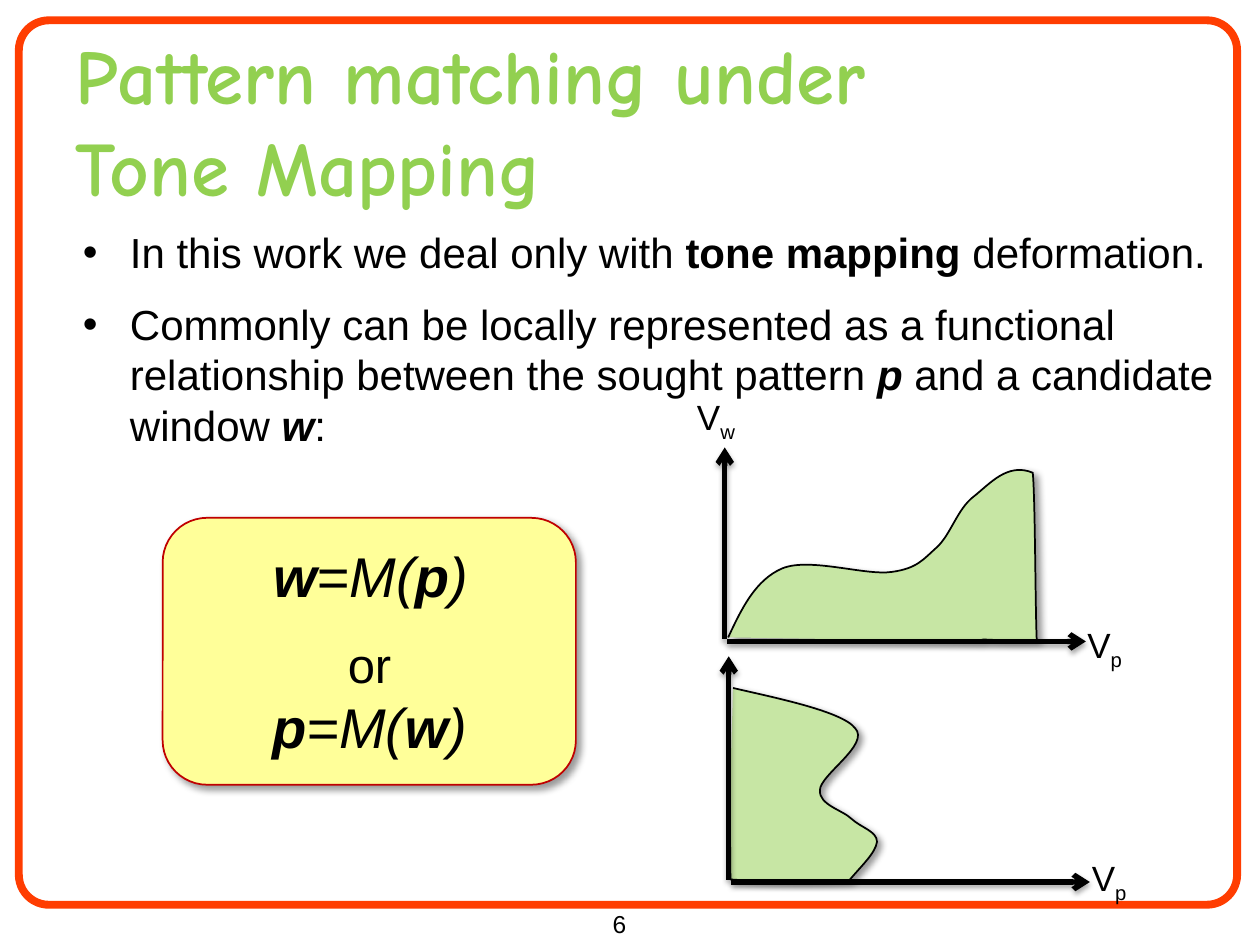
import dataclasses

import lxml.etree
import pptx
import pptx.dml.color
import pptx.enum.shapes
import pptx.enum.text
import pptx.oxml
import pptx.oxml.ns
import pptx.util

Cm, Pt = pptx.util.Cm, pptx.util.Pt
RGB = pptx.dml.color.RGBColor.from_string
SHAPE = pptx.enum.shapes.MSO_SHAPE
ALIGN = pptx.enum.text.PP_ALIGN
ANCHOR = pptx.enum.text.MSO_ANCHOR
qn = pptx.oxml.ns.qn


@dataclasses.dataclass(frozen=True)
class Theme:
    """Colours, fonts and type sizes of the slide."""
    ink: str = "000000"
    title: str = "92D050"
    frame: str = "FF3D01"
    area: str = "C7E6A4"
    panel: str = "FFFF99"
    panel_line: str = "C00000"
    font: str = "Arial"
    title_font: str = "Comic Neue"
    title_size: int = 44
    formula_size: int = 32
    or_size: int = 28
    body_size: int = 24
    label_size: int = 20
    number_size: int = 14


THEME = Theme()
TONE_CURVE = [
    (0.03, 0.08), (0.3, 0.66), (0.58, 1.24), (1.12, 1.47),
    (1.68, 1.7), (2.79, 1.32), (3.33, 1.4),
    (3.84, 1.47), (3.96, 1.65), (4.24, 1.9),
    (4.52, 2.16), (4.65, 2.67), (4.98, 2.92),
    (5.31, 3.18), (5.66, 3.61), (6.17, 3.4),
    (6.22, 2.87), (6.22, 0.71), (6.25, 0.03),
    (5.13, 0), (5.13, 0.08), (5.13, 0),
]
INVERSE_CURVE = [
    (0.05, 3.91), (0.81, 3.73), (2.24, 3.45), (2.51, 3.1),
    (2.82, 2.77), (1.8, 2.16), (1.8, 1.85),
    (1.78, 1.55), (2.26, 1.45), (2.44, 1.27),
    (2.64, 1.09), (2.95, 1.02), (2.95, 0.81),
    (2.92, 0.58), (2.64, 0.33), (2.39, 0.03),
    (1.68, 0), (0.76, 0), (0, 0.05),
    (-0.03, 0.76), (0.03, 0.71), (-0.05, 0.71),
]


def add_text(s, box, paragraphs, size, color=THEME.ink, font=THEME.font, align=ALIGN.LEFT,
             anchor=ANCHOR.TOP, wrap=True, bullet=False, space=0):
    """Add a text box; each paragraph is a list of (text, run format) pairs."""
    sp = s.shapes.add_textbox(*map(Cm, box))
    tf = sp.text_frame
    tf.word_wrap, tf.vertical_anchor = wrap, anchor
    for i, runs in enumerate(paragraphs):
        p = tf.add_paragraph() if i else tf.paragraphs[0]
        p.alignment = align
        p.space_before = p.space_after = Pt(space)
        if bullet:
            pPr = p._p.get_or_add_pPr()
            pPr.set("marL", str(Cm(0.95)))
            pPr.set("indent", str(-Cm(0.95)))
            lxml.etree.SubElement(pPr, qn("a:buFont"), typeface=font)
            lxml.etree.SubElement(pPr, qn("a:buChar"), char="•")
        for text, style in runs:
            for j, line in enumerate(text.split("\n")):
                if j:
                    p.add_line_break()
                r = p.add_run()
                r.text = line
                r.font.name, r.font.color.rgb = font, RGB(color)
                r.font.size = Pt(style.get("size", size))
                r.font.bold, r.font.italic = style.get("bold", False), style.get("italic", False)
                if "baseline" in style:
                    r.font._element.set("baseline", str(style["baseline"] * 1000))
    return sp


def add_shadow(sp, alpha=40, blur=4, dist=3, angle=45):
    """Give a shape or connector an outer shadow."""
    effects = lxml.etree.SubElement(sp._element.spPr, qn("a:effectLst"))
    shadow = lxml.etree.SubElement(
        effects, qn("a:outerShdw"), blurRad=str(Pt(blur)), dist=str(Pt(dist)),
        dir=str(angle * 60000), rotWithShape="0")
    color = lxml.etree.SubElement(shadow, qn("a:srgbClr"), val=THEME.ink)
    lxml.etree.SubElement(color, qn("a:alpha"), val=str(alpha * 1000))


def style_shape(sp, fill, line, width, shadow=True):
    """Set the fill, outline and shadow of a shape."""
    if fill:
        sp.fill.solid()
        sp.fill.fore_color.rgb = RGB(fill)
    else:
        sp.fill.background()
    sp.line.color.rgb, sp.line.width = RGB(line), Pt(width)
    if shadow:
        add_shadow(sp)
    else:
        sp.shadow.inherit = False


def add_arrow(s, x1, y1, x2, y2):
    """Draw an axis arrow between two points."""
    c = s.shapes.add_connector(pptx.enum.shapes.MSO_CONNECTOR.STRAIGHT,
                               Cm(x1), Cm(y1), Cm(x2), Cm(y2))
    c.line.color.rgb, c.line.width = RGB(THEME.ink), Pt(3)
    lxml.etree.SubElement(c.line._get_or_add_ln(), qn("a:tailEnd"), type="arrow")
    add_shadow(c, alpha=35, blur=3.1, dist=1.8, angle=90)


def add_curve(s, points):
    """Add an open freeform of cubic Bezier segments."""
    start, *rest = [(Cm(x), Cm(y)) for x, y in points]
    builder = s.shapes.build_freeform(*start)
    builder.add_line_segments(rest, close=False)
    sp = builder.convert_to_shape()
    lines = list(sp._element.iter(qn("a:lnTo")))
    for i in range(0, len(lines), 3):
        curve = lxml.etree.SubElement(lines[i].getparent(), qn("a:cubicBezTo"))
        for line in lines[i:i + 3]:
            curve.append(line[0])
            line.getparent().remove(line)
    return sp


def add_plot(s, box, curve, labels):
    """Draw a filled curve with two axes and labels placed from the box's left top."""
    left, top, width, height = box
    bottom = top + height
    sp = add_curve(s, [(left + 0.04 + x, bottom - y) for x, y in curve])
    style_shape(sp, THEME.area, THEME.ink, 1)
    add_arrow(s, left, bottom - 0.05, left, top)
    add_arrow(s, left + 0.05, bottom, left + width, bottom)
    for sub, dx, dy in labels:
        add_text(s, (left + dx, top + dy, 1.28, 1.12),
                 [[("V", {}), (sub, {"baseline": -25})]], THEME.label_size, wrap=False)


def add_frame(s, box):
    """Draw the rounded frame around the slide."""
    sp = s.shapes.add_shape(SHAPE.ROUNDED_RECTANGLE, *map(Cm, box))
    sp.adjustments[0] = 0.034
    style_shape(sp, None, THEME.frame, 4.5, shadow=False)


def add_formula_panel(s, box):
    """Draw the panel with the two mapping formulas."""
    left, top, width, height = box
    panel = s.shapes.add_shape(SHAPE.ROUNDED_RECTANGLE, *map(Cm, box))
    style_shape(panel, THEME.panel, THEME.panel_line, 1)
    strong, slanted = {"bold": True, "italic": True}, {"italic": True}

    def formula(result, source):
        """Return the runs of one formula."""
        return [(result, strong), ("=M(", slanted), (source, strong), (")", slanted)]

    add_text(s, (left + 0.65, top + 0.36, width - 1.25, 1.62), [formula("w", "p")],
             THEME.formula_size, align=ALIGN.CENTER)
    sp = add_text(s, (left + 0.63, top + 1.98, width - 1.25, 3.05),
                  [[("or", {"size": THEME.or_size})], formula("p", "w")],
                  THEME.formula_size, align=ALIGN.CENTER)
    sp.text_frame.paragraphs[0].line_spacing = 1.2


def add_body(s, box):
    """Write the bulleted explanation."""
    strong = {"bold": True, "italic": True}
    add_text(s, box, [
        [("In this work we deal only with ", {}), ("tone mapping ", {"bold": True}),
         ("deformation.", {})],
        [("Commonly can be locally represented as a functional relationship between "
          "the sought pattern ", {}), ("p", strong), (" and a candidate window ", {}),
         ("w", strong), (":", {})],
    ], THEME.body_size, bullet=True, space=6)


def main():
    """Build the slide and save it."""
    prs = pptx.Presentation()
    prs.slide_width, prs.slide_height = Cm(25.4), Cm(19.05)
    s = prs.slides.add_slide(prs.slide_layouts[6])
    add_frame(s, (0.38, 0.41, 24.56, 17.83))
    add_text(s, (1.27, 0.41, 22.71, 4.01),
             [[("Pattern matching under \nTone Mapping", {"bold": True})]],
             THEME.title_size, THEME.title, THEME.title_font, anchor=ANCHOR.MIDDLE)
    add_body(s, (1.42, 4.45, 23.47, 13.18))
    add_formula_panel(s, (3.28, 10.44, 8.33, 5.38))
    add_plot(s, (14.61, 9.02, 7.28, 3.91), TONE_CURVE, [("w", -0.81, -1.17), ("p", 7.06, 3.43)])
    add_plot(s, (14.69, 13.23, 7.28, 4.55), INVERSE_CURVE, [("p", 7.07, 3.92)])
    add_text(s, (9.53, 18.21, 5.92, 0.84), [[("6", {})]], THEME.number_size, align=ALIGN.CENTER)
    prs.save("out.pptx")


if __name__ == "__main__":
    main()
